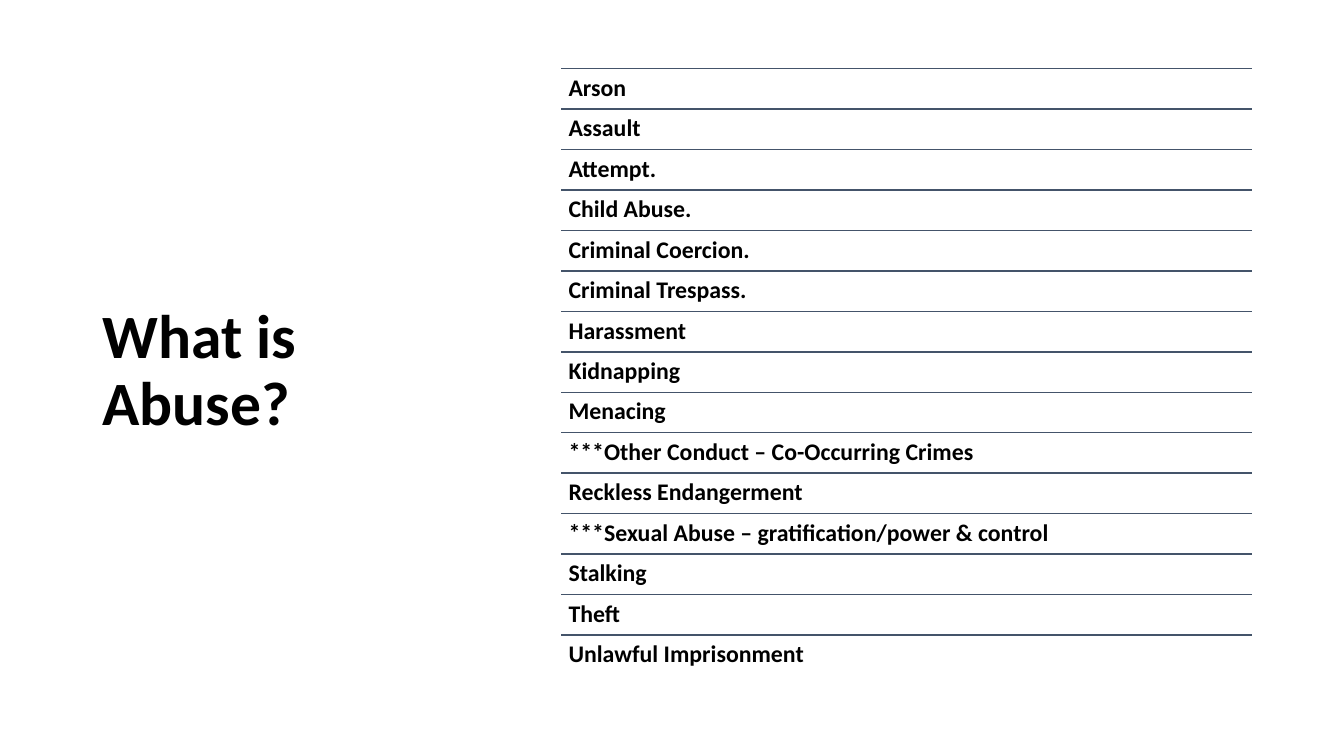
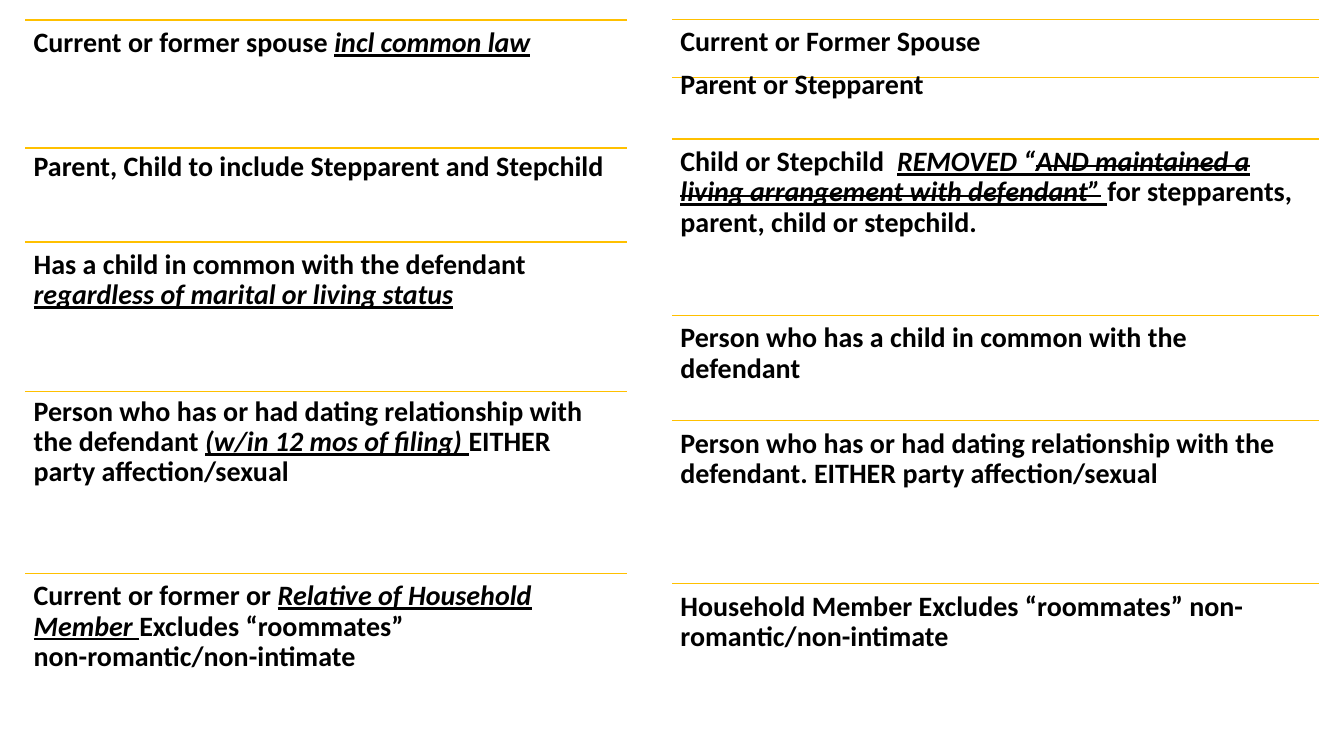
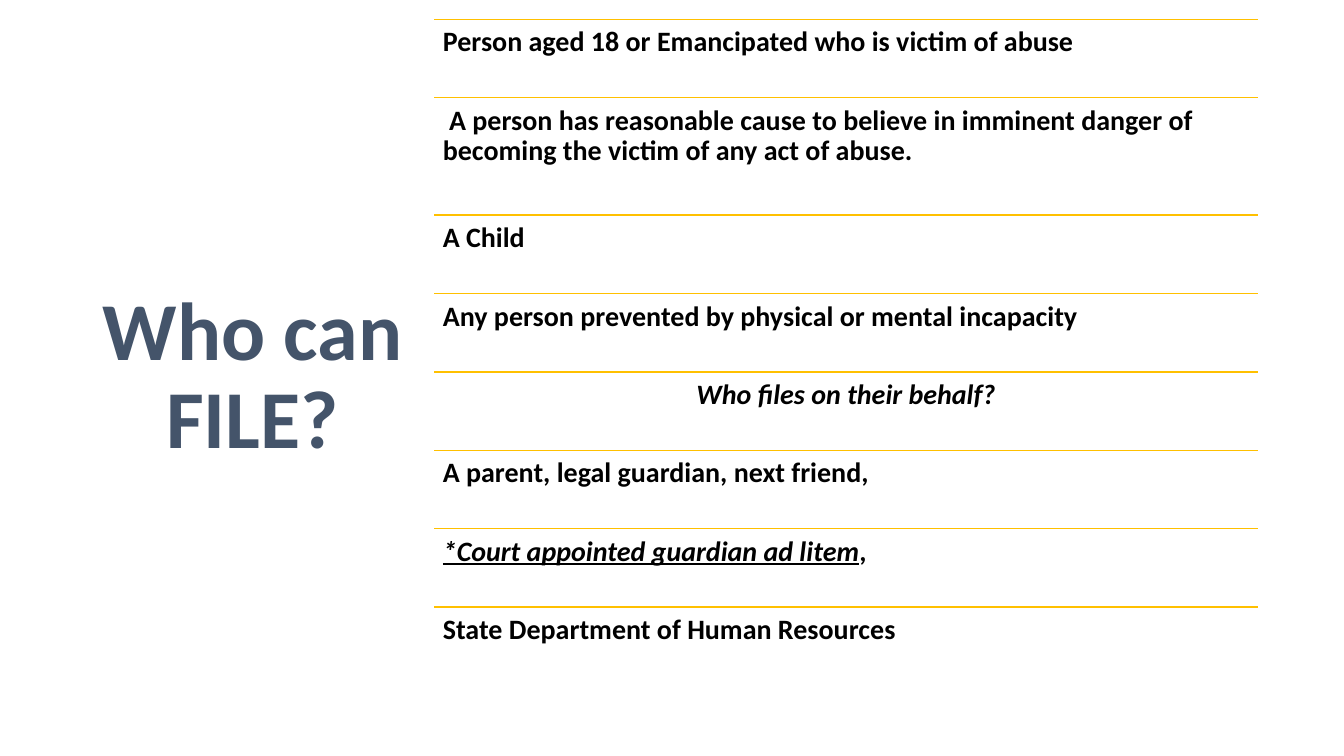
from collections import namedtuple

from lxml import etree
from pptx import Presentation
from pptx.dml.color import RGBColor
from pptx.enum.shapes import MSO_CONNECTOR
from pptx.enum.text import MSO_ANCHOR, MSO_AUTO_SIZE, PP_ALIGN
from pptx.oxml.ns import qn
from pptx.util import Pt

# Shared look
BLACK = RGBColor(0x00, 0x00, 0x00)
SLATE = RGBColor(0x44, 0x54, 0x6A)
GOLD = RGBColor(0xFF, 0xC0, 0x00)
FONT = "Calibri"
LINE_SPACING = 0.9
STRAIGHT = MSO_CONNECTOR.STRAIGHT
MIDDLE, TOP = MSO_ANCHOR.MIDDLE, MSO_ANCHOR.TOP
LEFT, CENTER = PP_ALIGN.LEFT, PP_ALIGN.CENTER
NO_FIT = MSO_AUTO_SIZE.NONE
TITLE_ONLY, BLANK = 5, 6

# A row's phrases are (text, style) pairs; style letters: i italic, u underline,
# s strike. The shift moves the text relative to its rule.
Row = namedtuple("Row", "height phrases shift align", defaults=(0, LEFT))

# Slide 1: equal rows
ABUSE_TYPES = [
    "Arson",
    "Assault",
    "Attempt.",
    "Child Abuse.",
    "Criminal Coercion.",
    "Criminal Trespass.",
    "Harassment",
    "Kidnapping",
    "Menacing",
    "***Other Conduct – Co-Occurring Crimes",
    "Reckless Endangerment",
    "***Sexual Abuse – gratification/power & control",
    "Stalking",
    "Theft",
    "Unlawful Imprisonment",
]
ABUSE_ROWS = [Row(28.9, [(text, "")]) for text in ABUSE_TYPES]

# Slide 2: two columns of relationships
RIGHT_ROWS = [
    Row(41.5, [("Current or Former Spouse", "")]),
    Row(44, [("Parent or Stepparent", "")], shift=-10.8),
    Row(126, [("Child or Stepchild  ", ""), ("REMOVED “", "iu"),
              ("AND maintained a living arrangement with defendant”", "ius"),
              (" ", "iu"),
              ("for stepparents, parent, child or stepchild.", "")]),
    Row(75, [("Person who has a child in common with the defendant", "")]),
    Row(116.6, [("Person who has or had dating relationship with the "
                 "defendant. EITHER party affection/sexual", "")]),
    Row(116.6, [("Household Member Excludes “roommates” "
                 "non-romantic/non-intimate", "")]),
]
LEFT_ROWS = [
    Row(91.6, [("Current or former spouse ", ""), ("incl common law", "iu")]),
    Row(67, [("Parent, Child to include Stepparent and Stepchild", "")], shift=-3),
    Row(107, [("Has a child in common with the defendant ", ""),
              ("regardless of marital or living status", "iu")]),
    Row(129.7, [("Person who has or had dating relationship with the defendant ", ""),
                ("(w/in 12 mos of filing) ", "iu"),
                ("EITHER party affection/sexual", "")], shift=-2),
    Row(130, [("Current or former or ", ""), ("Relative of Household Member ", "iu"),
              ("Excludes “roommates” non-romantic/non-intimate", "")]),
]

# Slide 3: people who can file
FILER_ROWS = [
    Row(56, [("Person aged 18 or Emancipated who is victim of abuse", "")]),
    Row(83.8, [(" A person has reasonable cause to believe in imminent danger of "
                "becoming the victim of any act of abuse.", "")]),
    Row(56, [("A Child", "")]),
    Row(56, [("Any person prevented by physical or mental incapacity", "")]),
    Row(56, [("Who files on their behalf?", "i")], align=CENTER),
    Row(56, [("A parent, legal guardian, next friend,", "")]),
    Row(56, [("*Court appointed guardian ad litem", "iu"), (",", "")]),
    Row(56, [("State Department of Human Resources", "")]),
]


def format_run(r, size, color=BLACK, style=""):
    font = r.font
    font.name, font.size, font.bold = FONT, Pt(size), True
    font.color.rgb = color
    font.italic = "i" in style
    font.underline = "u" in style
    if "s" in style:
        r._r.get_or_add_rPr().set("strike", "sngStrike")


def set_frame(tf, anchor, inset_x, inset_y):
    tf.word_wrap = True
    tf.auto_size = NO_FIT
    tf.vertical_anchor = anchor
    tf.margin_left = tf.margin_right = Pt(inset_x)
    tf.margin_top = tf.margin_bottom = Pt(inset_y)


def set_title(slide, text, box, size, color, align, insets):
    sp = slide.shapes.title
    sp.left, sp.top, sp.width, sp.height = map(Pt, box)
    tf = sp.text_frame
    set_frame(tf, MIDDLE, *insets)
    tf.text = text
    p = tf.paragraphs[0]
    p.alignment, p.line_spacing = align, LINE_SPACING
    format_run(p.runs[0], size, color)


def add_rule(shapes, x, y, width, color):
    rule = shapes.add_connector(STRAIGHT, Pt(x), Pt(y), Pt(x + width), Pt(y))
    rule.line.color.rgb = color
    rule.line.width = Pt(1)
    etree.SubElement(rule._element.spPr, qn("a:effectLst"))


def add_row_text(shapes, row, x, y, width, size, inset):
    sp = shapes.add_textbox(Pt(x), Pt(y + row.shift), Pt(width), Pt(row.height))
    tf = sp.text_frame
    set_frame(tf, TOP, inset, inset)
    p = tf.paragraphs[0]
    p.alignment, p.line_spacing = row.align, LINE_SPACING
    for text, style in row.phrases:
        r = p.add_run()
        r.text = text
        format_run(r, size, style=style)


def add_ruled_list(slide, rows, x, y, width, color=GOLD, size=20, inset=6):
    """Stack rows downwards, each with a rule on its top edge."""
    shapes = slide.shapes.add_group_shape().shapes
    for row in rows:
        add_rule(shapes, x, y, width, color)
        add_row_text(shapes, row, x, y, width, size, inset)
        y += row.height


def main():
    prs = Presentation()
    prs.slide_width, prs.slide_height = Pt(960), Pt(540)
    layouts = prs.slide_layouts

    # What is abuse
    slide = prs.slides.add_slide(layouts[TITLE_ONLY])
    set_title(slide, "What is Abuse?", (66, 49, 266, 433.5), 44, BLACK, LEFT, (7.2, 3.6))
    add_ruled_list(slide, ABUSE_ROWS, 401, 49, 493.2, SLATE, 17, 5.1)

    # Relationships
    slide = prs.slides.add_slide(layouts[BLANK])
    add_ruled_list(slide, RIGHT_ROWS, 480, 13.8, 462.2)
    add_ruled_list(slide, LEFT_ROWS, 18, 14.2, 430)

    # Who can file
    slide = prs.slides.add_slide(layouts[TITLE_ONLY])
    set_title(slide, "Who can FILE?", (50.4, 50.4, 260, 439), 58.7, SLATE, CENTER, (9.6, 4.8))
    add_ruled_list(slide, FILER_ROWS, 310.3, 13.8, 588.2)

    prs.save("out.pptx")


if __name__ == "__main__":
    main()
